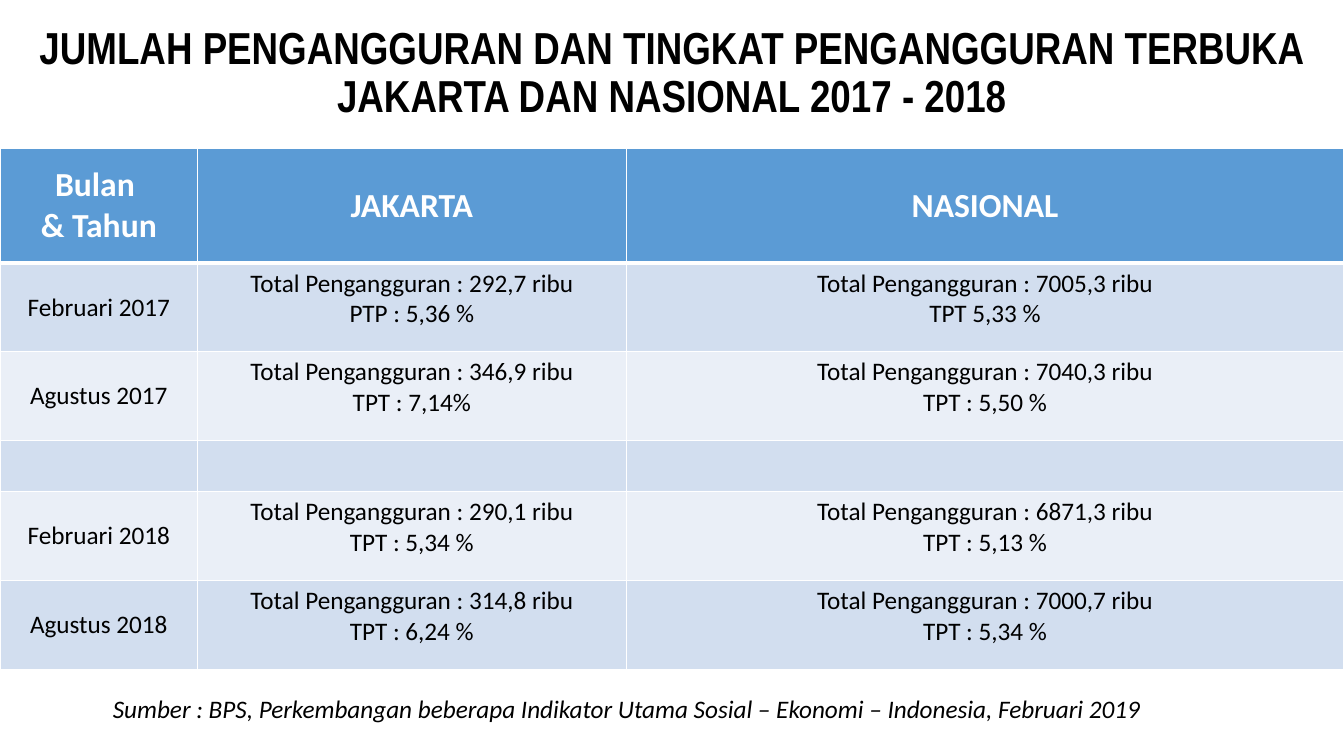
from dataclasses import dataclass

import lxml.etree
import pptx
import pptx.dml.color
import pptx.enum.text
import pptx.oxml.ns
import pptx.table
import pptx.text.text
import pptx.util

Inches = pptx.util.Inches
Pt = pptx.util.Pt
Align = pptx.enum.text.PP_ALIGN
Anchor = pptx.enum.text.MSO_ANCHOR

BLACK, WHITE = "000000", "FFFFFF"
HEADER_FILL = "5B9BD5"
BAND_FILLS = ("D2DEEF", "EAEFF7")
COLUMN_WIDTHS = (1.96, 4.25, 7.12)
HEADER_HEIGHT, DATA_HEIGHT, GAP_HEIGHT = 1.14, 0.88, 0.51


@dataclass(frozen=True)
class TextStyle:
    size: float
    font: str = "Calibri"
    color: str = BLACK
    bold: bool = False
    italic: bool = False
    align: Align = Align.CENTER
    line_spacing: float | None = None


@dataclass(frozen=True)
class UnemploymentRow:
    """One table row; each cell is a tuple of lines."""
    period: tuple[str, ...] = ()
    jakarta: tuple[str, ...] = ()
    national: tuple[str, ...] = ()
    height: float = DATA_HEIGHT


TITLE_STYLE = TextStyle(32, "Arial Narrow", bold=True, line_spacing=0.9)
HEADER_STYLE = TextStyle(24, color=WHITE, bold=True)
BODY_STYLE = TextStyle(18)
SOURCE_STYLE = TextStyle(18, italic=True, align=Align.LEFT)

TITLE = "JUMLAH PENGANGGURAN DAN TINGKAT PENGANGGURAN TERBUKA JAKARTA DAN NASIONAL 2017 - 2018"
SOURCE = ("Sumber : BPS, Perkembangan beberapa Indikator Utama Sosial – Ekonomi – "
          "Indonesia, Februari 2019")

ROWS = (
    UnemploymentRow(("Bulan ", "& Tahun"), ("JAKARTA",), ("NASIONAL",), HEADER_HEIGHT),
    UnemploymentRow(("Februari 2017",),
                    ("Total Pengangguran : 292,7 ribu", "PTP : 5,36 %"),
                    ("Total Pengangguran : 7005,3 ribu", "TPT 5,33 %")),
    UnemploymentRow(("Agustus 2017",),
                    ("Total Pengangguran : 346,9 ribu", "TPT : 7,14%"),
                    ("Total Pengangguran : 7040,3 ribu", "TPT : 5,50 %")),
    UnemploymentRow(height=GAP_HEIGHT),
    UnemploymentRow(("Februari 2018",),
                    ("Total Pengangguran : 290,1 ribu", "TPT : 5,34 %"),
                    ("Total Pengangguran : 6871,3 ribu", "TPT : 5,13 %")),
    UnemploymentRow(("Agustus 2018",),
                    ("Total Pengangguran : 314,8 ribu", "TPT : 6,24 %"),
                    ("Total Pengangguran : 7000,7 ribu", "TPT : 5,34 %")),
)


def rgb(color: str) -> pptx.dml.color.RGBColor:
    return pptx.dml.color.RGBColor.from_string(color)


def write_lines(frame: pptx.text.text.TextFrame, lines: tuple[str, ...],
                style: TextStyle) -> None:
    for index, line in enumerate(lines):
        paragraph = frame.add_paragraph() if index else frame.paragraphs[0]
        paragraph.alignment = style.align
        if style.line_spacing:
            paragraph.line_spacing = style.line_spacing
        run = paragraph.add_run()
        run.text = line
        run.font.name = style.font
        run.font.size = Pt(style.size)
        run.font.bold = style.bold
        run.font.italic = style.italic
        run.font.color.rgb = rgb(style.color)


def add_text(slide, left: float, top: float, width: float, height: float,
             text: str, style: TextStyle, anchor: Anchor = Anchor.TOP) -> None:
    box = slide.shapes.add_textbox(Inches(left), Inches(top), Inches(width), Inches(height))
    box.text_frame.word_wrap = True
    box.text_frame.vertical_anchor = anchor
    write_lines(box.text_frame, (text,), style)


def set_borders(cell: pptx.table._Cell, bottom_width: float) -> None:
    """Draw white borders; call before the fill, which must follow them in the XML."""
    qn = pptx.oxml.ns.qn
    properties = cell._tc.get_or_add_tcPr()
    for side, width in (("L", 1), ("R", 1), ("T", 1), ("B", bottom_width)):
        line = lxml.etree.SubElement(properties, qn(f"a:ln{side}"), w=str(Pt(width)))
        fill = lxml.etree.SubElement(line, qn("a:solidFill"))
        lxml.etree.SubElement(fill, qn("a:srgbClr"), val=WHITE)


def add_unemployment_table(slide) -> None:
    frame = slide.shapes.add_table(
        len(ROWS), len(COLUMN_WIDTHS), Inches(0), Inches(1.47),
        Inches(sum(COLUMN_WIDTHS)), Inches(sum(row.height for row in ROWS)))
    table = frame.table
    for column, width in zip(table.columns, COLUMN_WIDTHS):
        column.width = Inches(width)
    for row_index, row in enumerate(ROWS):
        table.rows[row_index].height = Inches(row.height)
        is_header = row_index == 0
        fill = HEADER_FILL if is_header else BAND_FILLS[(row_index - 1) % 2]
        for column_index, lines in enumerate((row.period, row.jakarta, row.national)):
            cell = table.cell(row_index, column_index)
            # The header's thick rule is shared with the top of the first data row.
            set_borders(cell, 3 if is_header else 1)
            cell.fill.solid()
            cell.fill.fore_color.rgb = rgb(fill)
            centred = is_header or column_index == 0
            cell.vertical_anchor = Anchor.MIDDLE if centred else Anchor.TOP
            write_lines(cell.text_frame, lines, HEADER_STYLE if is_header else BODY_STYLE)


def main() -> None:
    presentation = pptx.Presentation()
    presentation.slide_width = Inches(13.33)
    presentation.slide_height = Inches(7.5)
    slide = presentation.slides.add_slide(presentation.slide_layouts[6])
    add_text(slide, 0, 0, 13.33, 1.47, TITLE, TITLE_STYLE, Anchor.MIDDLE)
    add_unemployment_table(slide)
    add_text(slide, 1.02, 6.83, 11.22, 0.4, SOURCE, SOURCE_STYLE)
    presentation.save("out.pptx")


if __name__ == "__main__":
    main()
